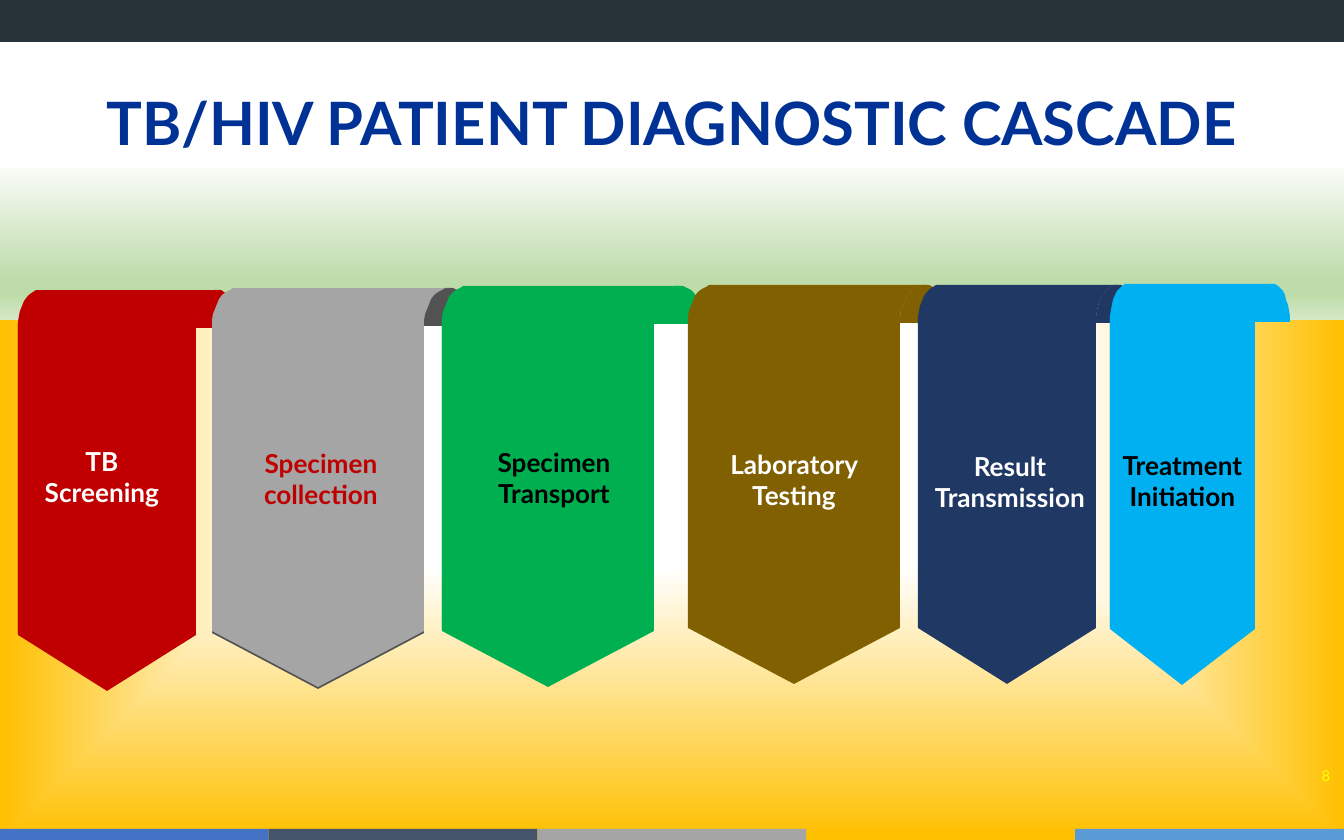
"""Build the TB/HIV patient diagnostic cascade slide."""
from dataclasses import dataclass
from math import cos, pi, sin

from pptx import Presentation
from pptx import util as u
from pptx.dml.color import RGBColor
from pptx.enum import shapes, text
from pptx.oxml import ns, parse_xml

SCALE = u.Inches(10) / 1344
WIDTH, HEIGHT = 1344, 840


@dataclass(frozen=True)
class Theme:
    font: str = "Lato"
    title_size: int = 32
    label_size: int = 14
    number_size: int = 8
    title: str = "003296"
    bar: str = "273339"
    white: str = "FFFFFF"
    black: str = "000000"
    yellow: str = "FFFF00"
    red: str = "C00000"
    gray: str = "A5A5A5"
    dark_gray: str = "525252"
    green: str = "00B050"
    brown: str = "806000"
    navy: str = "203864"
    sky: str = "00B0F0"
    stripes: tuple = ("4472C4", "44546A", "A5A5A5", "FFC000", "5B9BD5")
    band: tuple = ((0, "F8FBF6"), (74, "BEDCAA"), (83, "BEDCAA"), (100, "D4E8C6"))
    glow: tuple = ((0, "FFFFFF"), (35, "FFFFFF"), (100, "FFC000"))


THEME = Theme()
DOWNWARD = '<a:lin ang="5400000" scaled="0"/>'
OUTWARD = ('<a:path path="shape"><a:fillToRect l="50000" t="50000" '
           'r="50000" b="50000"/></a:path>')


def px(length):
    return u.Emu(round(length * SCALE))


def set_format(target, values):
    for name, value in values.items():
        setattr(target, name, value)


def set_fill(shape, color):
    shape.shadow.inherit = False
    shape.fill.solid()
    shape.fill.fore_color.rgb = RGBColor.from_string(color)
    shape.line.fill.background()


def set_gradient(properties, stops, direction):
    """Replace the solid fill of a properties element by a gradient."""
    stop_xml = "".join(
        f'<a:gs pos="{position * 1000}"><a:srgbClr val="{color}"/></a:gs>'
        for position, color in stops)
    gradient = parse_xml(f'<a:gradFill {ns.nsdecls("a")} rotWithShape="1">'
                         f'<a:gsLst>{stop_xml}</a:gsLst>{direction}</a:gradFill>')
    properties.replace(properties.find(ns.qn("a:solidFill")), gradient)


def add_background(slide):
    fill = slide.background.fill
    fill.solid()
    fill.fore_color.rgb = RGBColor.from_string(THEME.white)
    set_gradient(slide.element.find(".//" + ns.qn("p:bgPr")), THEME.glow, OUTWARD)


def add_block(slide, left, top, width, height, color):
    shape = slide.shapes.add_shape(shapes.MSO_SHAPE.RECTANGLE,
                                   *map(px, (left, top, width, height)))
    set_fill(shape, color)
    return shape


def write_lines(frame, lines, size, color, bold=True, line_spacing=None):
    for index, line in enumerate(lines):
        paragraph = frame.add_paragraph() if index else frame.paragraphs[0]
        paragraph.text = line
        set_format(paragraph, {"alignment": text.PP_ALIGN.CENTER,
                               "line_spacing": line_spacing})
        set_format(paragraph.font, {"name": THEME.font, "size": u.Pt(size), "bold": bold})
        paragraph.font.color.rgb = RGBColor.from_string(color)


def add_title(slide, words):
    title = slide.shapes.title
    slide.shapes.element.append(title.element)
    set_format(title, {"left": px(0), "top": px(42), "width": px(WIDTH), "height": px(126)})
    set_fill(title, THEME.white)
    set_format(title.text_frame, {
        "vertical_anchor": text.MSO_ANCHOR.BOTTOM, "word_wrap": True,
        "auto_size": text.MSO_AUTO_SIZE.NONE,
        "margin_top": px(5), "margin_bottom": px(10)})
    write_lines(title.text_frame, [words], THEME.title_size, THEME.title, line_spacing=0.9)


def add_label(slide, box, lines, color, size=THEME.label_size, bold=True, margin=13):
    label = slide.shapes.add_textbox(*map(px, box))
    set_format(label.text_frame, {
        "word_wrap": True, "vertical_anchor": text.MSO_ANCHOR.MIDDLE,
        "margin_left": px(margin), "margin_right": px(margin)})
    write_lines(label.text_frame, lines, size, color, bold)


def add_outline(slide, points, color):
    builder = slide.shapes.build_freeform(*points[0], scale=SCALE)
    builder.add_line_segments(points[1:], close=True)
    set_fill(builder.convert_to_shape(), color)


def curl(center, base, radius, rise=38, steps=10):
    """Return a quarter ellipse from its side up to its crown."""
    angles = [pi / 2 * step / steps for step in range(steps + 1)]
    return [(center + radius * cos(angle), base - rise * sin(angle)) for angle in angles]


def add_body(slide, left, top, width, color):
    right, radius, base = left + width, width * 0.12, top + 38
    shoulder = top + 343
    points = (curl(left + radius, base, -radius)[::-1]
              + [(left, shoulder), (left + width / 2, top + 399), (right, shoulder)]
              + curl(right + radius, base, -radius))
    add_outline(slide, points, color)


def add_flap(slide, left, top, width, color):
    right, radius, base = left + width, width * 0.12, top + 38
    crown = right + radius
    add_outline(slide, curl(crown, base, radius) + curl(crown, base, -radius)[::-1], color)


def add_ribbon(slide, left, top, width, fold, front=None):
    add_body(slide, left, top + 2 if front else top, width, fold)
    add_flap(slide, left, top, width, fold)
    if front:
        add_body(slide, left, top, width, front)


def main():
    presentation = Presentation()
    set_format(presentation, {"slide_width": px(WIDTH), "slide_height": px(HEIGHT)})
    slide = presentation.slides.add_slide(presentation.slide_layouts[5])
    add_background(slide)
    add_block(slide, 0, 0, WIDTH, 144, THEME.bar)
    stripe_width = WIDTH / len(THEME.stripes)
    for index, color in enumerate(THEME.stripes):
        add_block(slide, index * stripe_width, 829, stripe_width, 11, color)
    band = add_block(slide, 0, 168, WIDTH, 152, THEME.white)
    set_gradient(band.element.spPr, THEME.band, DOWNWARD)
    add_title(slide, "TB/HIV PATIENT DIAGNOSTIC CASCADE")

    ribbons = [
        (18, 290, 178, THEME.red, THEME.red),
        (212, 288, 212, THEME.dark_gray, THEME.gray),
        (442, 286, 212, THEME.green, THEME.green),
        (688, 285, 212, THEME.brown),
        (918, 285, 178, THEME.navy),
        (1110, 284, 145, THEME.sky, THEME.sky),
    ]
    for ribbon in ribbons:
        add_ribbon(slide, *ribbon)

    labels = [
        (5, 438, 194, ["TB", "Screening"], THEME.white),
        (216, 440, 210, ["Specimen collection"], THEME.red),
        (448, 439, 212, ["Specimen Transport"], THEME.black),
        (688, 441, 212, ["Laboratory Testing"], THEME.white),
        (917, 443, 186, ["Result Transmission"], THEME.white),
        (1098, 442, 169, ["Treatment Initiation"], THEME.black),
    ]
    for left, top, width, lines, color in labels:
        add_label(slide, (left, top, width, 77), lines, color)
    add_label(slide, (1310, 760, 32, 30), ["8"], THEME.yellow,
              THEME.number_size, bold=False, margin=0)
    presentation.save("out.pptx")


if __name__ == "__main__":
    main()
